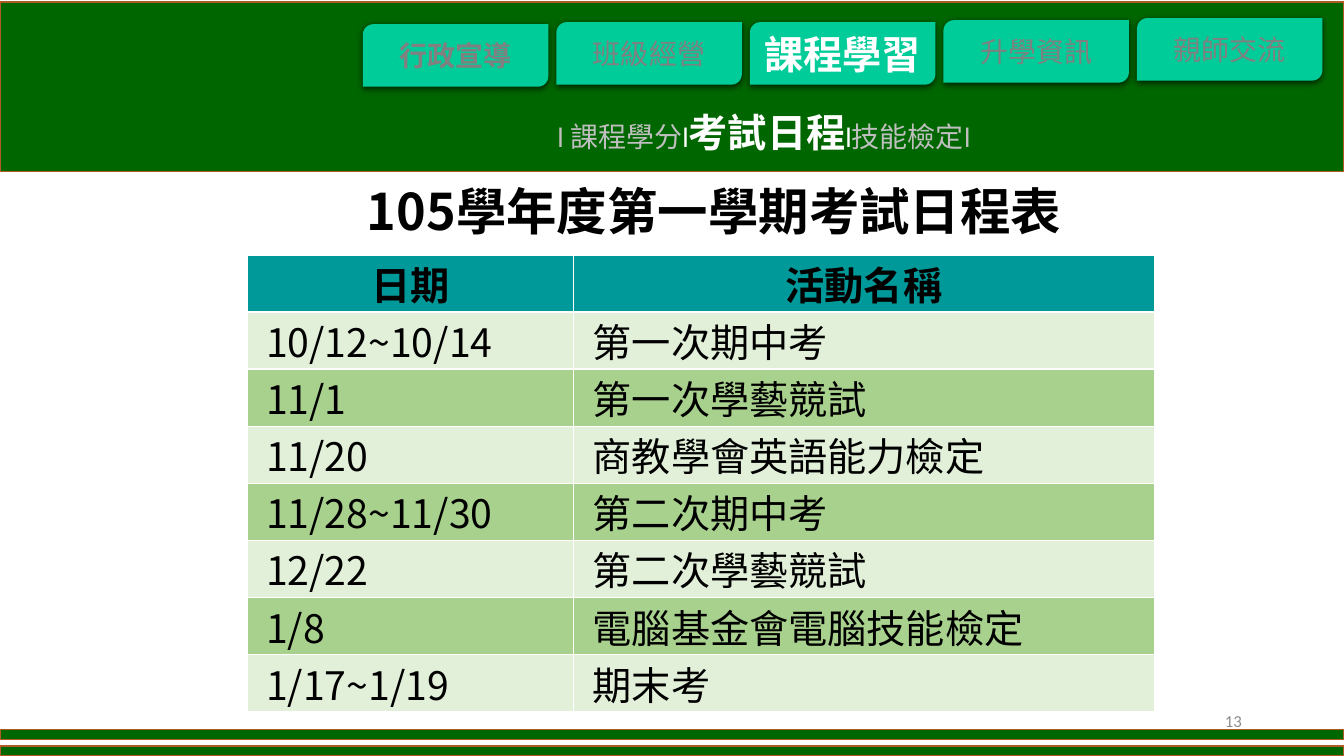
from dataclasses import dataclass

from pptx import Presentation
from pptx.dml.color import RGBColor
from pptx.enum.shapes import MSO_SHAPE as Shape
from pptx.enum.text import MSO_ANCHOR as Anchor, MSO_AUTO_SIZE as AutoSize, PP_ALIGN as Align
from pptx.oxml import parse_xml
from pptx.oxml.ns import nsdecls
from pptx.util import Inches, Pt


@dataclass(frozen=True)
class Theme:
    band: str = "006600"
    band_line: str = "AF5C24"
    tab: str = "00CC99"
    tab_text: str = "808080"
    nav_text: str = "BFBFBF"
    white: str = "FFFFFF"
    black: str = "000000"
    number: str = "8C8C8C"
    head_row: str = "009999"
    rows: tuple = ("E2F0D9", "A9D18E")
    latin: str = "Calibri"
    cjk: str = "Noto Sans CJK SC"
    title: int = 36
    strong: int = 28
    normal: int = 20
    small: int = 12


class SchedulePage:
    """Holds the theme and the slide; lengths are percentages of its size."""

    def __init__(self, deck, theme):
        self.deck, self.theme = deck, theme
        self.page = deck.slides.add_slide(deck.slide_layouts[5])

    def area(self, left, top, width, height):
        wide, high = self.deck.slide_width / 100, self.deck.slide_height / 100
        return [round(n) for n in (left * wide, top * high, width * wide, height * high)]

    def style(self, span, size, color, bold=False, face=None):
        face = face or self.theme.cjk
        span.font.size, span.font.bold, span.font.name = Pt(size), bold, face
        span.font.color.rgb = RGBColor.from_string(color)
        span.font._element.get_or_add_latin().addnext(
            parse_xml(f'<a:ea {nsdecls("a")} typeface="{face}"/>'))

    def fill_text(self, frame, text, size, color, bold=False, align=Align.LEFT, face=None):
        frame.text = text
        para = frame.paragraphs[0]
        para.alignment = align
        self.style(para.runs[0], size, color, bold, face)

    def shape(self, kind, place, fill, line=None):
        shape = self.page.shapes.add_shape(kind, *self.area(*place))
        shape.shadow.inherit = False
        shape.fill.solid()
        shape.fill.fore_color.rgb = RGBColor.from_string(fill)
        if line:
            shape.line.color.rgb = RGBColor.from_string(line)
            shape.line.width = Pt(1)
        else:
            shape.line.fill.background()
        return shape

    def band(self, top, height):
        self.shape(Shape.RECTANGLE, (0, top, 100, height), self.theme.band, self.theme.band_line)

    def tab(self, place, text, size, color, bold):
        tab = self.shape(Shape.ROUND_2_DIAG_RECTANGLE, place, self.theme.tab)
        tab._element.spPr.find("{*}effectLst").append(parse_xml(
            f'<a:outerShdw {nsdecls("a")} blurRad="{Pt(4.5)}" dist="{Pt(1.5)}" dir="5400000" '
            f'algn="ctr" rotWithShape="0"><a:srgbClr val="{self.theme.black}">'
            '<a:alpha val="63000"/></a:srgbClr></a:outerShdw>'))
        tab.text_frame.vertical_anchor = Anchor.MIDDLE
        self.fill_text(tab.text_frame, text, size, color, bold, Align.CENTER)

    def title(self, place, text):
        box = self.page.shapes.title
        box.left, box.top, box.width, box.height = self.area(*place)
        frame = box.text_frame
        frame.word_wrap, frame.auto_size = True, AutoSize.NONE
        frame.vertical_anchor = Anchor.TOP
        self.fill_text(frame, text, self.theme.title, self.theme.black, True)

    def text_box(self, place, anchor=Anchor.TOP):
        frame = self.page.shapes.add_textbox(*self.area(*place)).text_frame
        frame.word_wrap, frame.vertical_anchor = True, anchor
        return frame

    def trail(self, place, pieces):
        para = self.text_box(place).paragraphs[0]
        for text, *look in pieces:
            span = para.add_run()
            span.text = text
            self.style(span, *look)

    def table(self, place, records, shares):
        left, top, width, height = self.area(*place)
        table = self.page.shapes.add_table(
            len(records), len(shares), left, top, width, height).table
        table.first_row = table.horz_banding = False
        for column, share in zip(table.columns, shares):
            column.width = round(width * share)
        for index, record in enumerate(records):
            table.rows[index].height = round(height / len(records))
            for column, text in enumerate(record):
                self.cell(table.cell(index, column), index, text)

    def cell(self, cell, index, text):
        theme, head = self.theme, index == 0
        cell.margin_top = cell.margin_bottom = 0
        cell.margin_left = Inches(0.1 if head else 0.19)
        cell.vertical_anchor = Anchor.MIDDLE
        for side in "LRTB":
            thick = (index, side) in ((1, "B"), (2, "T"))
            cell._tc.get_or_add_tcPr().append(parse_xml(
                f'<a:ln{side} {nsdecls("a")} w="{Pt(2 if thick else 1)}"><a:solidFill>'
                f'<a:srgbClr val="{theme.white}"/></a:solidFill></a:ln{side}>'))
        cell.fill.solid()
        fill = theme.head_row if head else theme.rows[(index - 1) % 2]
        cell.fill.fore_color.rgb = RGBColor.from_string(fill)
        self.fill_text(cell.text_frame, text, theme.strong, theme.black, head,
                       Align.CENTER if head else Align.LEFT)


def main():
    deck = Presentation()
    deck.slide_width, deck.slide_height = Inches(13.33), Inches(7.5)
    theme = Theme()
    page = SchedulePage(deck, theme)

    # Header and footer bands
    for top, height in ((0.27, 22.4), (98.67, 1.33), (96.53, 1.33)):
        page.band(top, height)

    # Section tabs, with the current one emphasised
    muted = (theme.normal, theme.tab_text)
    tabs = (
        ("行政宣導", 3.2, *muted, True),
        ("班級經營", 2.93, *muted, False),
        ("課程學習", 2.93, theme.strong, theme.white, True),
        ("升學資訊", 2.67, *muted, False),
        ("親師交流", 2.4, *muted, False),
    )
    for index, (text, top, *look) in enumerate(tabs):
        page.tab((27 + 14.4 * index, top, 13.8, 8.27), text, *look)

    # Topic trail
    grey, white = (theme.normal, theme.nav_text), (theme.normal, theme.white)
    page.trail((40.73, 13.73, 50.25, 7.6), (
        ("l ", *grey, False, theme.latin),
        ("課程學分", *grey),
        ("l", *white, False, theme.latin),
        ("考試日程", theme.strong, theme.white, True),
        ("l", *white, False, theme.latin),
        ("技能檢定", *grey),
        ("l", *grey, False, theme.latin),
    ))

    # Exam schedule
    page.title((26.55, 23.2, 55.95, 9.47), "105學年度第一學期考試日程表")
    page.table((18.38, 33.73, 67.5, 60.4), (
        ("日期", "活動名稱"),
        ("10/12~10/14", "第一次期中考"),
        ("11/1", "第一次學藝競試"),
        ("11/20", "商教學會英語能力檢定"),
        ("11/28~11/30", "第二次期中考"),
        ("12/22", "第二次學藝競試"),
        ("1/8", "電腦基金會電腦技能檢定"),
        ("1/17~1/19", "期末考"),
    ), (0.36, 0.64))

    # Page number
    page.fill_text(page.text_box((70.65, 92.67, 22.5, 5.33), Anchor.MIDDLE), "13",
                   theme.small, theme.number, align=Align.RIGHT, face=theme.latin)

    deck.save("out.pptx")


if __name__ == "__main__":
    main()
